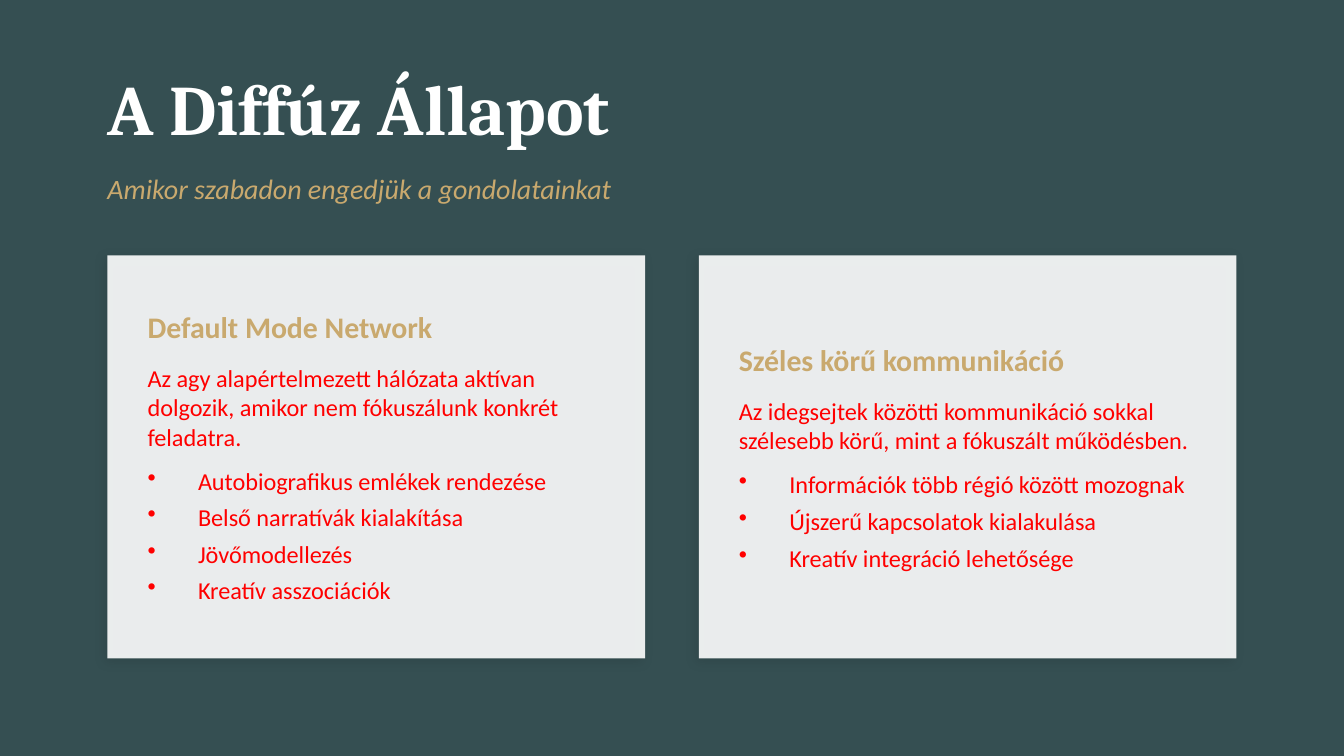
from lxml import etree
from pptx import Presentation
from pptx.dml.color import RGBColor
from pptx.enum.shapes import MSO_SHAPE
from pptx.enum.text import MSO_ANCHOR, MSO_AUTO_SIZE, PP_ALIGN
from pptx.oxml import parse_xml
from pptx.oxml.ns import nsdecls, qn
from pptx.util import Inches, Pt

GOLD, RED, WHITE, GREEN = "C9A96E", "FF0000", "FFFFFF", "354F52"
MARGIN, CARD_W, CARD_H, CARD_TOP, GAP, PAD = 0.8, 4, 3, 1.9, 0.4, 0.2
CARDS = [
    ("Default Mode Network",
     "Az agy alapértelmezett hálózata aktívan dolgozik, amikor nem "
     "fókuszálunk konkrét feladatra.",
     ["Autobiografikus emlékek rendezése", "Belső narratívák kialakítása",
      "Jövőmodellezés", "Kreatív asszociációk"]),
    ("Széles körű kommunikáció",
     "Az idegsejtek közötti kommunikáció sokkal szélesebb körű, mint a "
     "fókuszált működésben.",
     ["Információk több régió között mozognak",
      "Újszerű kapcsolatok kialakulása", "Kreatív integráció lehetősége"]),
]


def rgb(color):
    return RGBColor.from_string(color)


def add_run(p, text, size, color, font="Calibri", bold=False, italic=False):
    p.alignment = PP_ALIGN.LEFT
    r = p.add_run()
    r.text = text
    r.font.name, r.font.size = font, Pt(size)
    r.font.bold, r.font.italic = bold, italic
    r.font.color.rgb = rgb(color)


def set_frame(sp, inset=None):
    tf = sp.text_frame
    tf.word_wrap = True
    tf.auto_size = MSO_AUTO_SIZE.NONE
    tf.vertical_anchor = MSO_ANCHOR.MIDDLE
    if inset is not None:
        tf.margin_left = tf.margin_right = Inches(inset)
        tf.margin_top = tf.margin_bottom = Inches(inset)
    return tf


def add_bullet(p, indent=27):
    pPr = p._p.get_or_add_pPr()
    pPr.set("marL", str(Pt(indent)))
    pPr.set("indent", str(-Pt(indent)))
    etree.SubElement(pPr, qn("a:buSzPct")).set("val", "100000")
    etree.SubElement(pPr, qn("a:buChar")).set("char", "•")


def style_panel(sp):
    """Translucent white fill with a soft shadow and no outline."""
    sp.fill.solid()
    sp.fill.fore_color.rgb = rgb(WHITE)
    color = sp._element.spPr.find(qn("a:solidFill"))[0]
    etree.SubElement(color, qn("a:alpha")).set("val", "90000")
    sp.line.fill.background()
    sp.shadow.inherit = False
    sp._element.spPr.find(qn("a:effectLst")).append(parse_xml(
        f'<a:outerShdw {nsdecls("a")} blurRad="{Pt(6)}" dist="{Pt(2)}" '
        f'dir="{135 * 60000}" algn="bl" rotWithShape="0">'
        '<a:srgbClr val="000000"><a:alpha val="10000"/></a:srgbClr>'
        '</a:outerShdw>'))


def add_header(slide, x, y, w, title, subtitle):
    sp = slide.shapes.title
    sp.left, sp.top, sp.width, sp.height = map(Inches, (x, y, w, 0.8))
    add_run(set_frame(sp, 0).paragraphs[0], title, 38, WHITE, "Cambria", bold=True)
    sp = slide.shapes.add_textbox(*map(Inches, (x, y + 0.8, w, 0.4)))
    add_run(set_frame(sp, 0).paragraphs[0], subtitle, 15, GOLD, italic=True)


def add_card(slide, x, y, w, h, heading, intro, points):
    style_panel(slide.shapes.add_shape(MSO_SHAPE.RECTANGLE,
                                       *map(Inches, (x, y, w, h))))
    inner = (x + PAD, y + PAD, w - 2 * PAD, h - 2 * PAD)
    tf = set_frame(slide.shapes.add_textbox(*map(Inches, inner)))
    p = tf.paragraphs[0]
    p.space_after = Pt(10)
    add_run(p, heading, 16, GOLD, bold=True)
    p = tf.add_paragraph()
    p.space_after = Pt(8)
    add_run(p, intro, 13, RED)
    for point in points:
        p = tf.add_paragraph()
        add_bullet(p)
        p.space_after = Pt(0 if point == points[-1] else 4)
        add_run(p, point, 13, RED)


def main():
    prs = Presentation()
    prs.slide_width = Inches(10)
    prs.slide_height = prs.slide_width * 9 // 16
    slide = prs.slides.add_slide(prs.slide_layouts[5])
    slide.background.fill.solid()
    slide.background.fill.fore_color.rgb = rgb(GREEN)
    add_header(slide, MARGIN, 0.4, 2 * CARD_W + GAP, "A Diffúz Állapot",
               "Amikor szabadon engedjük a gondolatainkat")
    for i, card in enumerate(CARDS):
        add_card(slide, MARGIN + i * (CARD_W + GAP), CARD_TOP, CARD_W, CARD_H, *card)
    prs.save("out.pptx")


if __name__ == "__main__":
    main()
